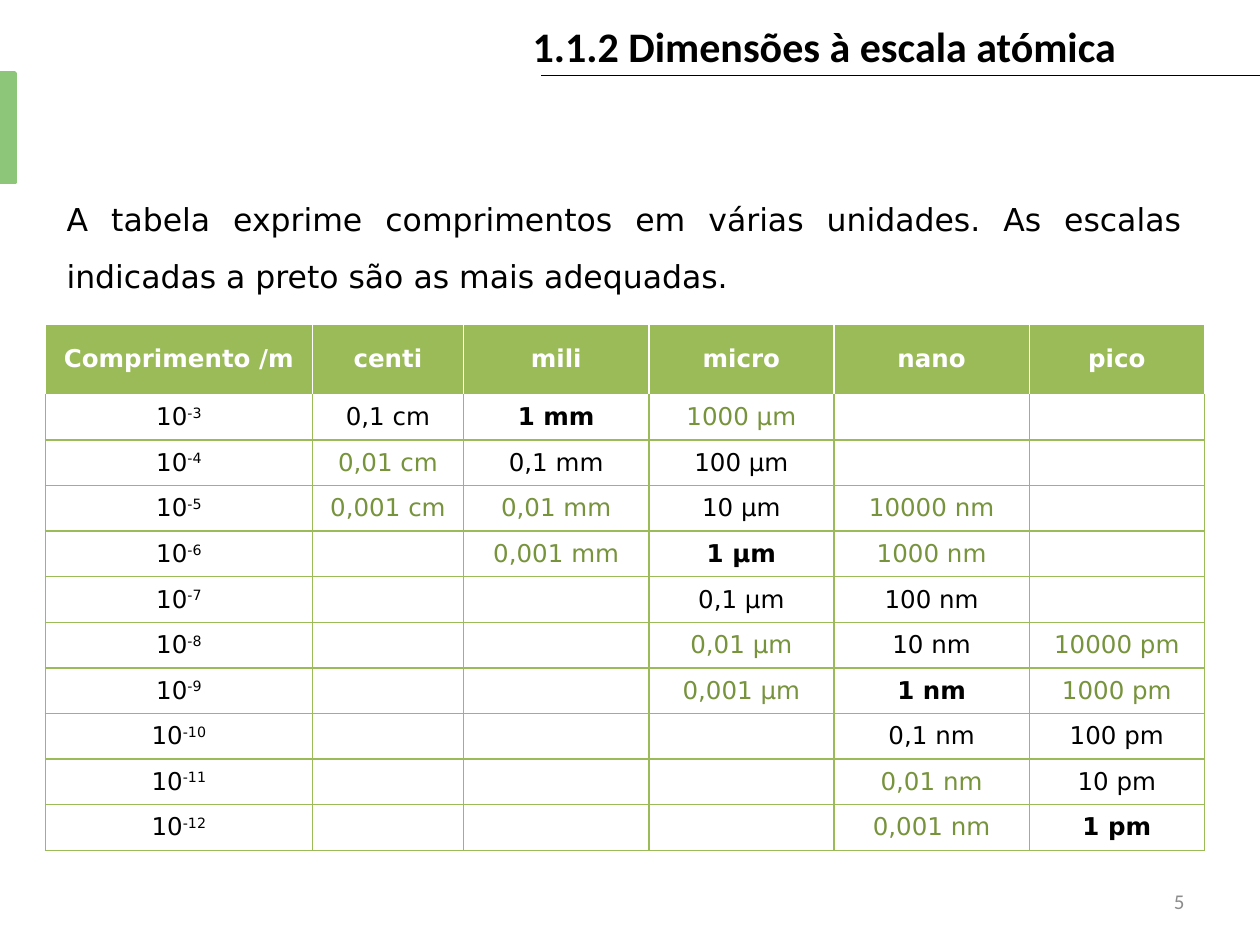
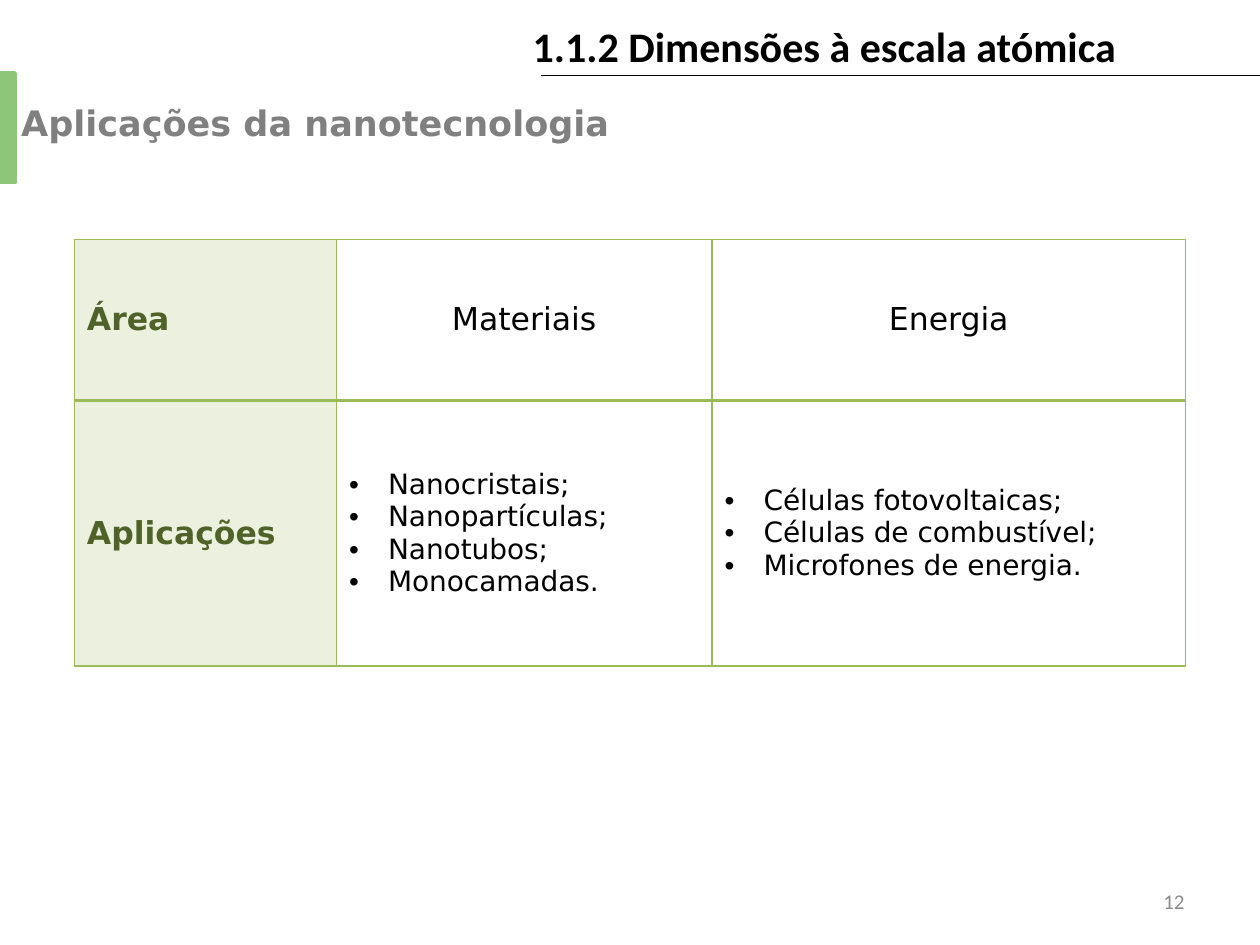
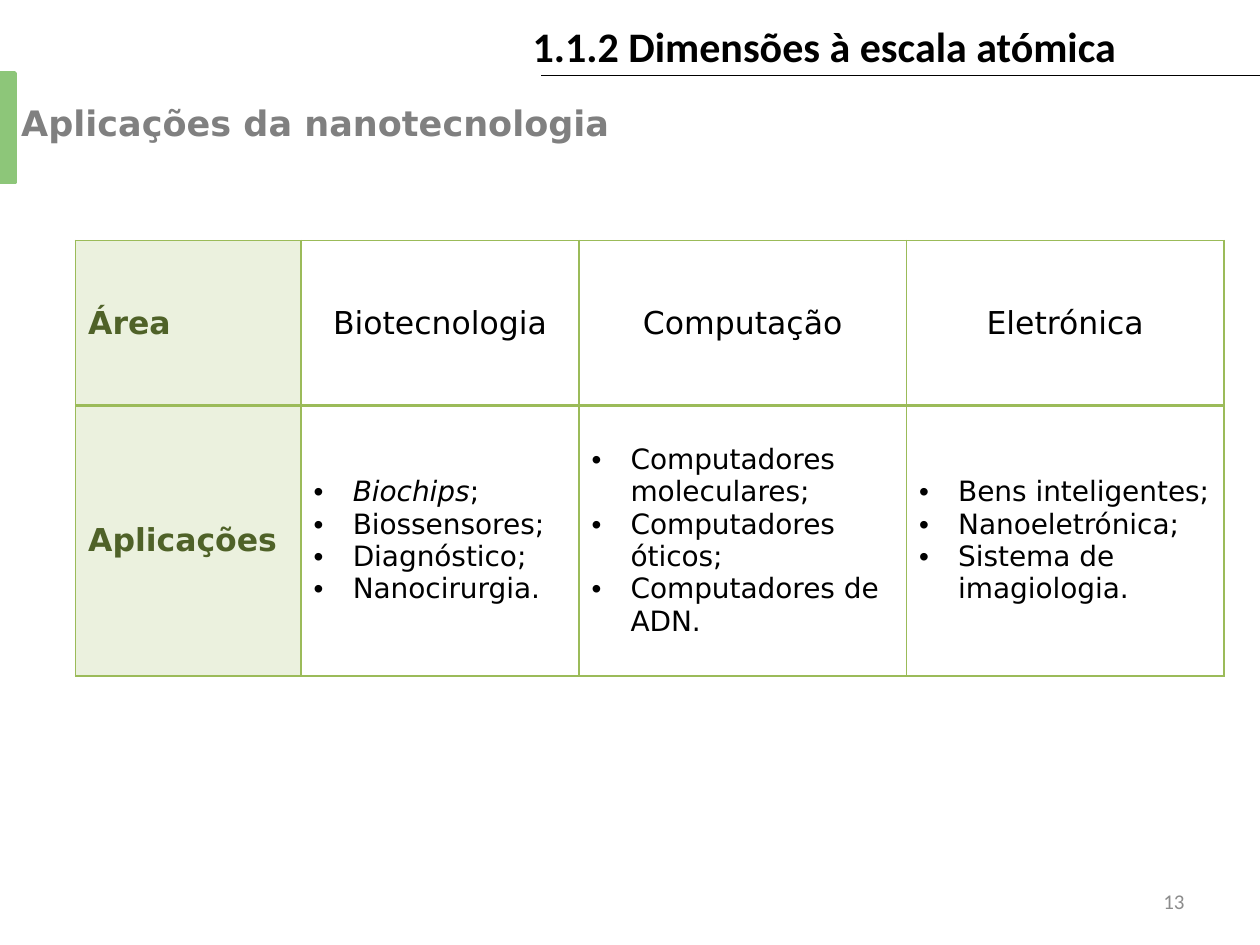
from lxml import etree
from pptx import Presentation
from pptx.dml.color import RGBColor
from pptx.enum.shapes import MSO_CONNECTOR, MSO_SHAPE
from pptx.enum.text import MSO_ANCHOR, MSO_AUTO_SIZE, PP_ALIGN
from pptx.oxml.ns import qn
from pptx.util import Inches, Pt

LEFT, CENTER, RIGHT, JUSTIFY = PP_ALIGN.LEFT, PP_ALIGN.CENTER, PP_ALIGN.RIGHT, PP_ALIGN.JUSTIFY
TOP, MIDDLE = MSO_ANCHOR.TOP, MSO_ANCHOR.MIDDLE
GROW, FIXED = MSO_AUTO_SIZE.SHAPE_TO_FIT_TEXT, MSO_AUTO_SIZE.NONE
RECTANGLE, STRAIGHT = MSO_SHAPE.RECTANGLE, MSO_CONNECTOR.STRAIGHT

COLUMNS, ROWS = 100, 75
COLORS = {
    "black": "000000", "white": "FFFFFF", "number": "8C8C8C", "heading": "808080",
    "band": "8DC679", "green": "9BBB59", "muted": "77933C", "label": "4F6228", "pale": "EBF1DE",
}
STYLES = {
    "title": {"name": "Calibri", "size": Pt(24), "bold": True, "color": "black"},
    "number": {"name": "Calibri", "size": Pt(12), "color": "number"},
    "heading": {"name": "DejaVu Sans", "size": Pt(20), "bold": True, "color": "heading"},
    "body": {"name": "DejaVu Sans", "size": Pt(18), "color": "black"},
    "label": {"name": "DejaVu Sans", "size": Pt(18), "bold": True, "color": "label"},
    "item": {"name": "DejaVu Sans", "size": Pt(16), "color": "black"},
    "header": {"name": "DejaVu Sans", "size": Pt(14), "bold": True, "color": "white"},
    "value": {"name": "DejaVu Sans", "size": Pt(14), "color": "black"},
    "best": {"name": "DejaVu Sans", "size": Pt(14), "bold": True, "color": "black"},
    "poor": {"name": "DejaVu Sans", "size": Pt(14), "color": "muted"},
}
PREFIXES = {"centi": ("cm", -2), "mili": ("mm", -3), "micro": ("µm", -6),
            "nano": ("nm", -9), "pico": ("pm", -12)}
AMOUNTS = {
    -3: ("0,001", "poor"), -2: ("0,01", "poor"), -1: ("0,1", "value"), 0: ("1", "best"),
    1: ("10", "value"), 2: ("100", "value"), 3: ("1000", "poor"), 4: ("10000", "poor"),
}


class Deck:
    def __init__(self):
        self.presentation = Presentation()
        self.presentation.slide_width = Inches(10)
        self.presentation.slide_height = Inches(7.5)
        self.column = self.presentation.slide_width / COLUMNS
        self.row = self.presentation.slide_height / ROWS
        self.slide = None

    def place(self, left, top, width, height):
        return (round(left * self.column), round(top * self.row),
                round(width * self.column), round(height * self.row))

    def color(self, key):
        return RGBColor.from_string(COLORS[key])

    def start(self, number):
        self.slide = self.presentation.slides.add_slide(self.presentation.slide_layouts[6])
        self.rule((100, 6), (42.9, 6))
        self.text((41.3, 1.1, 49.6, 5), "1.1.2 Dimensões à escala atómica", "title", fit=GROW)
        self.band((-0.1, 5.8, 1.3, 8.7))
        self.text((71.7, 69.5, 23.3, 4), str(number), "number", RIGHT, MIDDLE)

    def heading(self):
        self.text((0.7, 7.6, 63.8, 4.9), "Aplicações da nanotecnologia", "heading")

    def rule(self, begin, end):
        line = self.slide.shapes.add_connector(STRAIGHT, *self.place(*begin, *end))
        line.line.color.rgb = self.color("black")
        line.line.width = Pt(0.75)
        etree.SubElement(line._element.spPr, qn("a:effectLst"))

    def band(self, area):
        band = self.slide.shapes.add_shape(RECTANGLE, *self.place(*area))
        band.shadow.inherit = False
        band.fill.solid()
        band.fill.fore_color.rgb = band.line.color.rgb = self.color("band")
        band.line.width = Pt(2)

    def run(self, paragraph, words, style, italic=False, raised=False):
        run = paragraph.add_run()
        run.text = words
        for key, value in STYLES[style].items():
            if key == "color":
                run.font.color.rgb = self.color(value)
            else:
                setattr(run.font, key, value)
        if italic:
            run.font.italic = True
        if raised:
            run.font._element.set("baseline", "30000")

    def text(self, area, words, style, align=LEFT, anchor=TOP, spacing=None, fit=FIXED):
        frame = self.slide.shapes.add_textbox(*self.place(*area)).text_frame
        for key, value in {"word_wrap": True, "auto_size": fit, "vertical_anchor": anchor}.items():
            setattr(frame, key, value)
        paragraph = frame.paragraphs[0]
        paragraph.alignment = align
        paragraph.line_spacing = spacing
        self.run(paragraph, words, style)

    def table(self, left, top, widths, heights):
        area = self.place(left, top, sum(widths), sum(heights))
        table = self.slide.shapes.add_table(len(heights), len(widths), *area).table
        table.first_row = table.horz_banding = False
        for column, width in zip(table.columns, widths):
            column.width = round(width * self.column)
        for row, height in zip(table.rows, heights):
            row.height = round(height * self.row)
        return table

    def cell(self, cell, fill=None, edge="green", **edges):
        cell.vertical_anchor = MIDDLE
        properties = cell._tc.get_or_add_tcPr()
        for side in "LRTB":
            color, width = edges.get(side, (edge, 1))
            border = etree.SubElement(properties, qn(f"a:ln{side}"), w=str(Pt(width)))
            solid = etree.SubElement(border, qn("a:solidFill"))
            etree.SubElement(solid, qn("a:srgbClr"), val=COLORS[color])
        if fill:
            cell.fill.solid()
            cell.fill.fore_color.rgb = self.color(fill)
        else:
            cell.fill.background()
        return cell.text_frame

    def cell_line(self, frame, words, style, align=CENTER, exponent=""):
        paragraph = frame.paragraphs[0]
        paragraph.alignment = align
        if words:
            self.run(paragraph, words, style)
            if exponent:
                self.run(paragraph, exponent, style, raised=True)
        else:
            size = STYLES[style]["size"].pt
            etree.SubElement(paragraph._p, qn("a:endParaRPr"), sz=str(round(size * 100)))

    def bullets(self, frame, items):
        for index, item in enumerate(items):
            paragraph = frame.add_paragraph() if index else frame.paragraphs[0]
            properties = paragraph._p.get_or_add_pPr()
            properties.set("marL", str(Inches(0.31)))
            properties.set("indent", str(-Inches(0.31)))
            etree.SubElement(properties, qn("a:buFont"), typeface="Arial")
            etree.SubElement(properties, qn("a:buChar"), char="•")
            foreign, mark, rest = item.rpartition("|")
            if mark:
                self.run(paragraph, foreign, "item", italic=True)
            self.run(paragraph, rest, "item")

    def lengths_table(self, left, top, widths, heights):
        table = self.table(left, top, widths, heights)
        for index, words in enumerate(["Comprimento /m", *PREFIXES]):
            frame = self.cell(table.cell(0, index), "green", "white")
            self.cell_line(frame, words, "header")
        for row in range(1, len(heights)):
            power = -2 - row
            edges = {"T": ("white", 1)} if row == 1 else {}
            frame = self.cell(table.cell(row, 0), **edges)
            self.cell_line(frame, "10", "value", exponent=str(power))
            for index, (unit, base) in enumerate(PREFIXES.values(), 1):
                amount, style = AMOUNTS.get(power - base, ("", "value"))
                frame = self.cell(table.cell(row, index), **edges)
                self.cell_line(frame, f"{amount} {unit}" if amount else "", style)

    def areas_table(self, left, top, widths, heights, areas):
        table = self.table(left, top, widths, heights)
        divider = ("green", 2)
        for index, (area, uses) in enumerate([("Área", "Aplicações"), *areas.items()]):
            fill = None if index else "pale"
            upper = self.cell(table.cell(0, index), fill, B=divider)
            lower = self.cell(table.cell(1, index), fill, T=divider)
            if index:
                self.cell_line(upper, area, "body")
                self.bullets(lower, uses)
            else:
                self.cell_line(upper, area, "label", LEFT)
                self.cell_line(lower, uses, "label", LEFT)


def main():
    deck = Deck()

    deck.start(5)
    deck.text((4.3, 13.9, 90.5, 11.8),
              "A tabela exprime comprimentos em várias unidades. "
              "As escalas indicadas a preto são as mais adequadas.",
              "body", JUSTIFY, spacing=1.5)
    deck.lengths_table(3.6, 25.7, [21.2, 12, 14.7, 14.7, 15.5, 13.9], [5.6] + [3.62] * 10)

    deck.start(12)
    deck.heading()
    deck.areas_table(5.9, 19, [20.8, 29.8, 37.6], [12.8, 21.05], {
        "Materiais": ["Nanocristais;", "Nanopartículas;", "Nanotubos;", "Monocamadas."],
        "Energia": ["Células fotovoltaicas;", "Células de combustível;",
                    "Microfones de energia."],
    })

    deck.start(13)
    deck.areas_table(6, 19.1, [17.9, 22.05, 26, 25.2], [13.1, 21.45], {
        "Biotecnologia": ["Biochips|;", "Biossensores;", "Diagnóstico;", "Nanocirurgia."],
        "Computação": ["Computadores moleculares;", "Computadores óticos;",
                       "Computadores de ADN."],
        "Eletrónica": ["Bens inteligentes;", "Nanoeletrónica;", "Sistema de imagiologia."],
    })
    deck.heading()

    deck.presentation.save("out.pptx")


if __name__ == "__main__":
    main()
